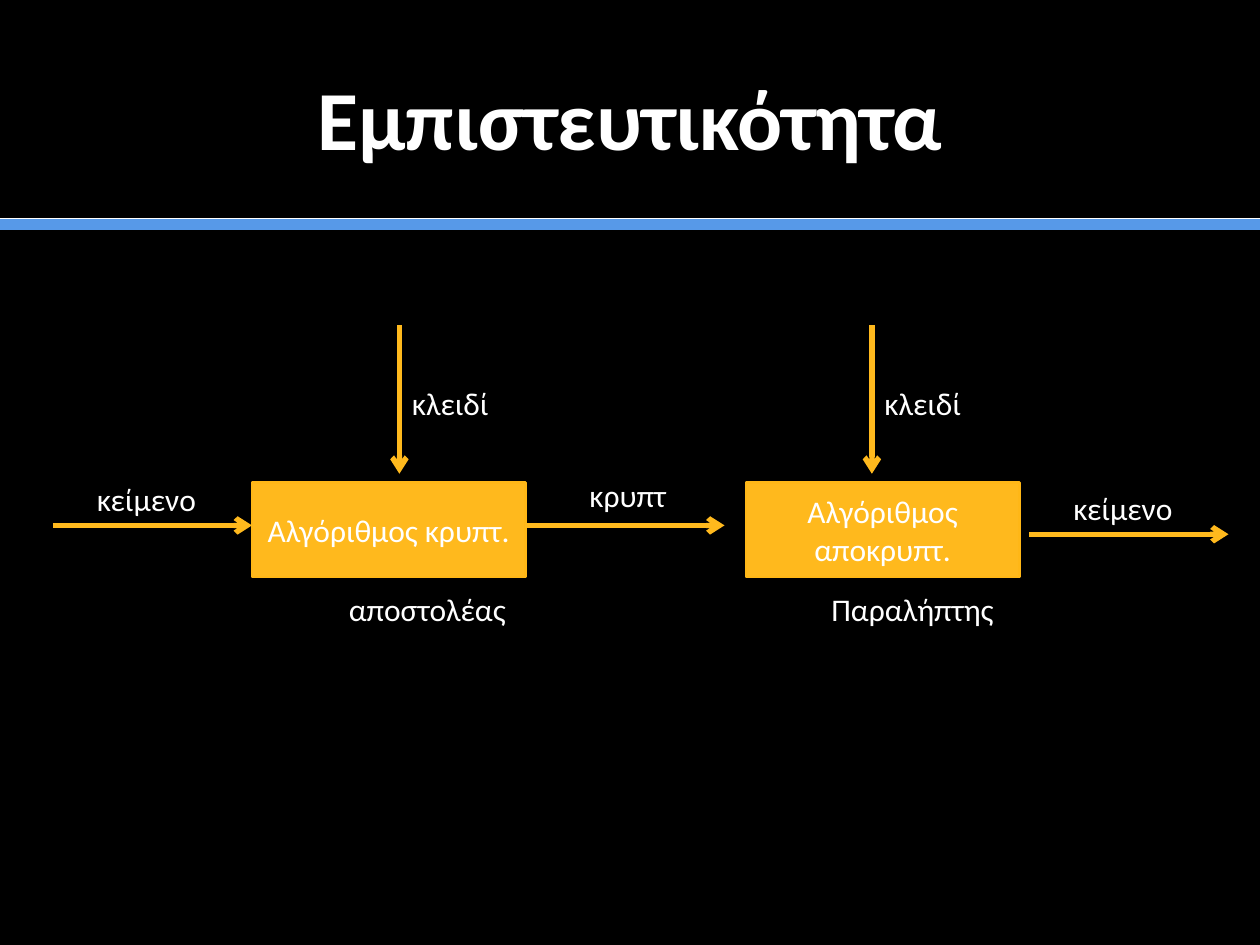
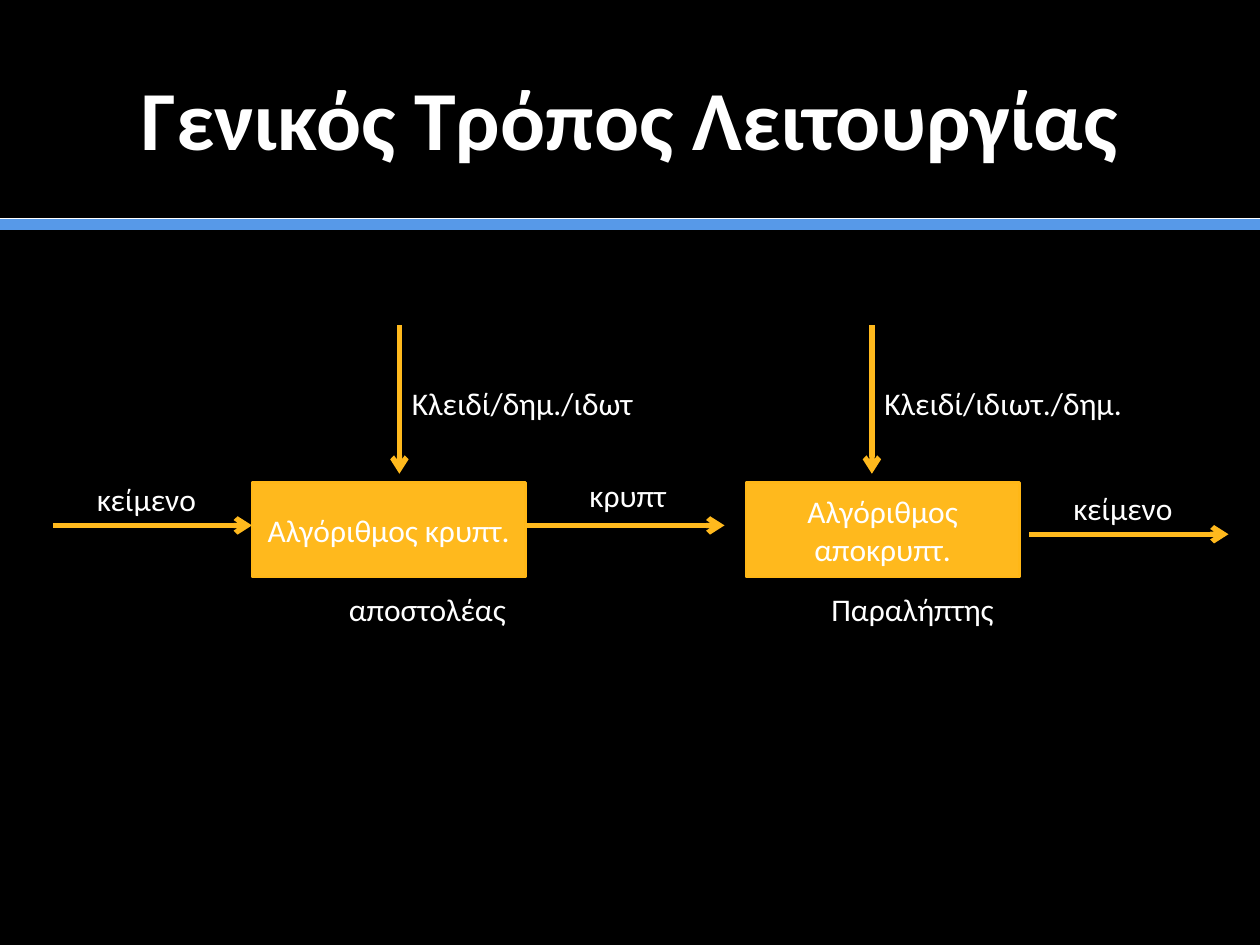
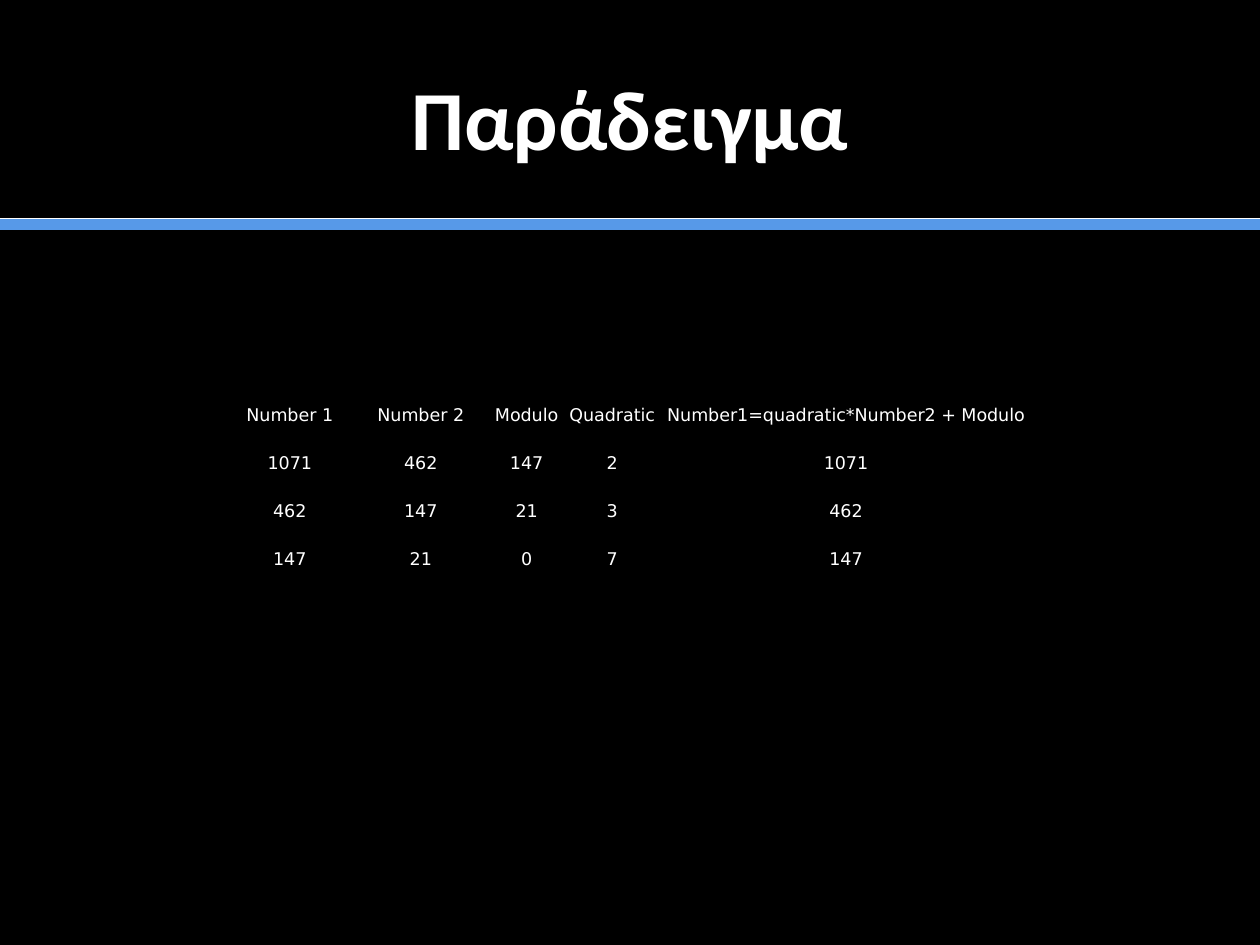
from pptx import Presentation
from pptx.dml.color import RGBColor
from pptx.enum.shapes import MSO_CONNECTOR, MSO_SHAPE
from pptx.enum.text import MSO_ANCHOR as ANCHOR, MSO_AUTO_SIZE, PP_ALIGN as ALIGN
from pptx.oxml.ns import qn
from pptx.util import Inches, Pt
from lxml.etree import SubElement

# Shared style
BLACK, WHITE, BLUE = "000000", "FFFFFF", "5799E8"
AMBER, AMBER_EDGE = "FFB91D", "FFB717"
FONT, TABLE_FONT = "Calibri", "DejaVu Sans"

# Diagram slides: title, and the two key labels with their width
DIAGRAMS = [
    ("Εμπιστευτικότητα", ("κλειδί", "κλειδί"), 1.33),
    ("Γενικός Τρόπος Λειτουργίας", ("Κλειδί/δημ./ιδωτ", "Κλειδί/ιδιωτ./δημ."), 2.33),
]
# Algorithm boxes: text, left, party name, party left
BOXES = [
    ("Αλγόριθμος κρυπτ.", 2, "αποστολέας", 2.67),
    ("Αλγόριθμος αποκρυπτ.", 5.92, "Παραλήπτης", 6.5),
]
KEY_LEFTS = (3.17, 6.92)
BOX_TOP, BOX_W, BOX_H = 3.83, 2.17, 0.75
KEY_TOP, KEY_END, FLOW_LEN = 2.58, 3.76, 1.58
# Flow arrows: left, height on the slide, label, label left, label top
FLOWS = [
    (0.42, 4.17, "κείμενο", 0.67, 3.76),
    (4.17, 4.17, "κρυπτ", 4.58, 3.73),
    (8.17, 4.24, "κείμενο", 8.42, 3.83),
]

# Table slide
TABLE_TITLE = "Παράδειγμα"
ROWS = [
    ("Number 1", "Number 2", "Modulo", "Quadratic", "Number1=quadratic*Number2 + Modulo"),
    ("1071", "462", "147", "2", "1071"),
    ("462", "147", "21", "3", "462"),
    ("147", "21", "0", "7", "147"),
]
COL_WIDTHS = (1.04, 1.04, 0.64, 0.72, 2.99)
ROW_H = 0.38


def rgb(color):
    return RGBColor.from_string(color)


def write(tf, text, size=18, font=FONT, bold=False, align=ALIGN.LEFT):
    p = tf.paragraphs[0]
    p.alignment = align
    r = p.add_run()
    r.text = text
    r.font.size, r.font.name, r.font.bold = Pt(size), font, bold
    r.font.color.rgb = rgb(WHITE)


def add_line(s, x1, y1, x2, y2, color, width, arrow=False):
    line = s.shapes.add_connector(
        MSO_CONNECTOR.STRAIGHT, Inches(x1), Inches(y1), Inches(x2), Inches(y2))
    line.line.color.rgb = rgb(color)
    line.line.width = Pt(width)
    if arrow:
        SubElement(line.line._get_or_add_ln(), qn("a:tailEnd"), type="arrow")
    SubElement(line._element.spPr, qn("a:effectLst"))


def add_label(s, text, x, y, w):
    tf = s.shapes.add_textbox(Inches(x), Inches(y), Inches(w), Inches(0.4)).text_frame
    tf.word_wrap = True
    tf.auto_size = MSO_AUTO_SIZE.SHAPE_TO_FIT_TEXT
    write(tf, text)


def add_box(s, text, x):
    sp = s.shapes.add_shape(
        MSO_SHAPE.RECTANGLE, Inches(x), Inches(BOX_TOP), Inches(BOX_W), Inches(BOX_H))
    sp.shadow.inherit = False
    sp.fill.solid()
    sp.fill.fore_color.rgb = rgb(AMBER)
    sp.line.color.rgb = rgb(AMBER_EDGE)
    sp.line.width = Pt(1.5)
    sp.text_frame.word_wrap = True
    sp.text_frame.vertical_anchor = ANCHOR.MIDDLE
    write(sp.text_frame, text, align=ALIGN.CENTER)


def add_slide(prs, title):
    s = prs.slides.add_slide(prs.slide_layouts[5])
    s.background.fill.solid()
    s.background.fill.fore_color.rgb = rgb(BLACK)
    add_line(s, 0, 1.78, 10, 1.78, BLUE, 7)
    add_line(s, 0, 1.73, 10, 1.73, WHITE, 0.5)
    sp = s.shapes.title
    sp.left, sp.top, sp.width, sp.height = (Inches(v) for v in (0.5, 0.3, 9, 1.25))
    sp.text_frame.vertical_anchor = ANCHOR.MIDDLE
    write(sp.text_frame, title, 48, bold=True, align=ALIGN.CENTER)
    return s


def add_diagram(s, keys, key_w):
    # Boxes and the parties under them
    for text, x, party, party_x in BOXES:
        add_box(s, text, x)
        add_label(s, party, party_x, 4.63, 1.58)
    # Keys coming in from above
    for key, x in zip(keys, KEY_LEFTS):
        add_line(s, x, KEY_TOP, x, KEY_END, AMBER, 3, arrow=True)
        add_label(s, key, x, 3, key_w)
    # Text flowing from left to right
    for x, y, text, label_x, label_y in FLOWS:
        add_line(s, x, y, x + FLOW_LEN, y, AMBER, 3, arrow=True)
        add_label(s, text, label_x, label_y, 1.33)


def format_cell(cell, text):
    tc_pr = cell._tc.get_or_add_tcPr()
    for side in ("lnL", "lnR", "lnT", "lnB"):
        SubElement(SubElement(tc_pr, qn(f"a:{side}")), qn("a:noFill"))
    cell.fill.background()
    cell.vertical_anchor = ANCHOR.BOTTOM
    cell.margin_left = cell.margin_right = cell.margin_top = Inches(0.01)
    cell.margin_bottom = 0
    write(cell.text_frame, text, 10, TABLE_FONT, align=ALIGN.CENTER)


def add_number_table(s):
    table = s.shapes.add_table(
        len(ROWS), len(COL_WIDTHS), Inches(1.78), Inches(3),
        Inches(sum(COL_WIDTHS)), Inches(ROW_H * len(ROWS))).table
    table.first_row = table.horz_banding = False
    for col, w in zip(table.columns, COL_WIDTHS):
        col.width = Inches(w)
    for row, texts in zip(table.rows, ROWS):
        row.height = Inches(ROW_H)
        for cell, text in zip(row.cells, texts):
            format_cell(cell, text)


def main():
    prs = Presentation()
    prs.slide_width, prs.slide_height = Inches(10), Inches(7.5)
    for title, keys, key_w in DIAGRAMS:
        add_diagram(add_slide(prs, title), keys, key_w)
    add_number_table(add_slide(prs, TABLE_TITLE))
    prs.save("out.pptx")


if __name__ == "__main__":
    main()
